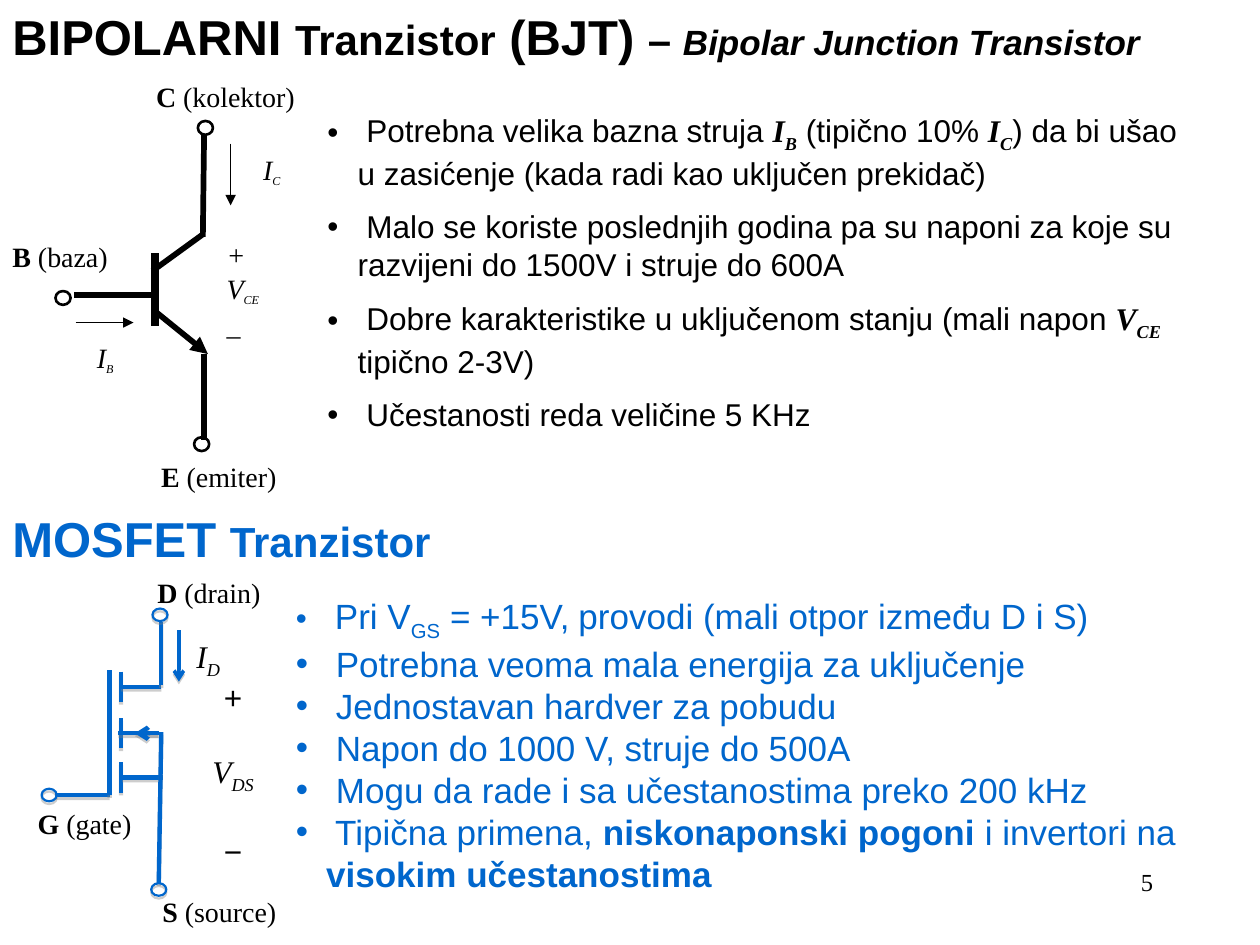
from dataclasses import dataclass
from typing import Optional

from lxml.etree import SubElement
from pptx import Presentation
from pptx.dml.color import RGBColor
from pptx.enum.shapes import MSO_CONNECTOR as Connector, MSO_SHAPE as Shape
from pptx.enum.text import MSO_AUTO_SIZE as AutoSize, PP_ALIGN as Align
from pptx.oxml.ns import qn
from pptx.util import Inches, Pt

COLORS = {"black": "000000", "blue": "0066CC", "shadow": "808080"}
SANS, SERIF = "Arial", "Times New Roman"


@dataclass(frozen=True)
class Span:
    text: str
    size: float = 18
    font: str = SANS
    color: str = "black"
    bold: bool = False
    italic: bool = False
    sub: bool = False


@dataclass(frozen=True)
class Label:
    left: float
    top: float
    width: float
    height: float
    paras: list
    wrap: bool = True
    align: Align = Align.LEFT
    gap: float = 0
    bullet: bool = False


@dataclass(frozen=True)
class Wire:
    x1: float
    y1: float
    x2: float
    y2: float
    width: float
    head: Optional[str] = None


def rgb(name: str) -> RGBColor:
    return RGBColor.from_string(COLORS[name])


def set_effects(shape, shadow: bool) -> None:
    effects = SubElement(shape._element.spPr, qn("a:effectLst"))
    if shadow:
        outer = SubElement(effects, qn("a:outerShdw"), blurRad="0", dist=str(Pt(1.6)),
                           dir="5400000", rotWithShape="0")
        tint = SubElement(outer, qn("a:srgbClr"), val=COLORS["shadow"])
        SubElement(tint, qn("a:alpha"), val="38000")


def draw_wire(shapes, wire: Wire, color: str, shadow: bool) -> None:
    ends = [Inches(v) for v in (wire.x1, wire.y1, wire.x2, wire.y2)]
    line = shapes.add_connector(Connector.STRAIGHT, *ends)
    line.line.color.rgb = rgb(color)
    line.line.width = Pt(wire.width)
    if wire.head:
        SubElement(line.line._get_or_add_ln(), qn("a:tailEnd"), type=wire.head)
    set_effects(line, shadow)


def draw_terminal(shapes, left: float, top: float, height: float,
                  color: str, width: float, shadow: bool) -> None:
    ring = shapes.add_shape(Shape.OVAL, Inches(left), Inches(top), Inches(0.12), Inches(height))
    ring.fill.background()
    ring.line.color.rgb = rgb(color)
    ring.line.width = Pt(width)
    set_effects(ring, shadow)


def draw_label(shapes, label: Label) -> None:
    box = shapes.add_textbox(Inches(label.left), Inches(label.top),
                             Inches(label.width), Inches(label.height))
    frame = box.text_frame
    frame.word_wrap = label.wrap
    frame.auto_size = AutoSize.SHAPE_TO_FIT_TEXT
    for index, spans in enumerate(label.paras):
        para = frame.paragraphs[0] if index == 0 else frame.add_paragraph()
        para.alignment = label.align
        if index and label.gap:
            para.space_before = Pt(label.gap)
        if label.bullet:
            props = para._p.get_or_add_pPr()
            props.set("marL", str(Inches(0.24)))
            props.set("indent", str(-Inches(0.24)))
            SubElement(props, qn("a:buFont"), typeface=SANS)
            SubElement(props, qn("a:buChar"), char="•")
        for span in spans:
            run = para.add_run()
            run.text = span.text
            font = run.font
            font.name, font.size = span.font, Pt(span.size)
            font.bold, font.italic = span.bold, span.italic
            font.color.rgb = rgb(span.color)
            if span.sub:
                run._r.get_or_add_rPr().set("baseline", "-25000")


def symbol(name: str, sub: str, size: float = 18, sub_size: float = 18,
           bold: bool = False) -> list[Span]:
    return [Span(name, size, SERIF, bold=bold, italic=True),
            Span(sub, sub_size, SERIF, bold=bold, italic=True, sub=True)]


def pin(letter: str, name: str) -> list:
    return [[Span(letter + " ", 16, SERIF, bold=True), Span(f"({name})", 16, SERIF)]]


def blue(text: str, size: float = 20, **style) -> Span:
    return Span(text, size, color="blue", **style)


MOSFET_WIRES = [
    Wire(0.44, 6.31, 0.87, 6.31, 2.5),
    Wire(0.87, 6.31, 0.87, 5.32, 2.5),
    *[Wire(0.96, top, 0.96, top + 0.24, 2.5) for top in (5.33, 5.7, 6.05)],
    Wire(0.96, 5.45, 1.28, 5.45, 2.5),
    Wire(1.28, 5.44, 1.28, 4.94, 2.5),
    Wire(0.94, 5.82, 1.26, 5.82, 2.5),
    Wire(0.97, 6.17, 1.29, 6.17, 2.5),
    Wire(1.26, 7.01, 1.28, 5.81, 2.5),
    Wire(1.26, 5.82, 1.07, 5.82, 2.5, "arrow"),
]
MOSFET_TERMINALS = [(1.21, 4.83), (1.2, 7.01), (0.33, 6.26)]
MOSFET_PINS = [
    Label(1.15, 4.52, 1.1, 0.37, pin("D", "drain")),
    Label(1.19, 7.05, 1.45, 0.37, pin("S", "source")),
    Label(0.2, 6.35, 1.02, 0.37, pin("G", "gate")),
    Label(1.57, 5.33, 0.56, 1.62, [[Span("+")], symbol("V", "DS"), [Span("−")]],
          wrap=False, align=Align.CENTER, gap=21),
]
BJT_WIRES = [
    Wire(1.23, 2.01, 1.23, 2.59, 5),
    Wire(1.23, 2.47, 1.65, 2.81, 3.25, "triangle"),
    Wire(1.21, 2.15, 1.61, 1.86, 3.25),
    Wire(0.59, 2.34, 1.24, 2.34, 3.25),
    Wire(1.61, 1.88, 1.62, 1.07, 3.25),
    Wire(1.62, 2.81, 1.62, 3.49, 3.25),
    Wire(1.83, 1.14, 1.83, 1.63, 0.75, "triangle"),
    Wire(0.6, 2.56, 1.06, 2.56, 0.75, "triangle"),
]
BJT_TERMINALS = [(1.57, 0.96), (1.54, 3.47), (0.44, 2.31)]
BJT_LABELS = [
    Label(1.7, 1.84, 0.48, 0.9, [[Span("+", 16, SERIF, italic=True)], symbol("V", "CE", 16, 12),
                                 [Span("_", 16, SERIF, italic=True)]], wrap=False),
    Label(1.99, 1.16, 0.35, 0.37, [symbol("I", "C", 16, 12)], wrap=False),
    Label(0.67, 2.65, 0.34, 0.37, [symbol("I", "B", 16, 12)], wrap=False),
    Label(1.14, 0.58, 1.32, 0.37, pin("C", "kolektor"), wrap=False),
    Label(0, 1.85, 1.09, 0.37, pin("B", "baza")),
    Label(1.18, 3.6, 1.13, 0.37, pin("E", "emiter"), wrap=False),
]
BJT_POINTS = [
    [Span(" Potrebna velika bazna struja "), *symbol("I", "B", bold=True),
     Span(" (tipično 10% "), *symbol("I", "C", bold=True),
     Span(") da bi ušao u zasićenje (kada radi kao uključen prekidač)")],
    [Span(" Malo se koriste poslednjih godina pa su naponi za koje su "
          "razvijeni do 1500V i struje do 600A")],
    [Span(" Dobre karakteristike u uključenom stanju (mali napon "),
     *symbol("V", "CE", bold=True), Span(" tipično 2-3V)")],
    [Span(" Učestanosti reda veličine 5 KHz")],
]
MOSFET_POINTS = [
    [blue(" ", 18), blue("Pri V"), blue("GS", sub=True), blue(" = +15V,"), blue(" ", 18),
     blue("provodi (mali otpor između D i S)")],
    [blue(" Potrebna veoma mala energija za uključenje")],
    [blue(" Jednostavan hardver za pobudu")],
    [blue(" Napon do 1000 V, struje do 500A")],
    [blue(" Mogu da rade i sa učestanostima preko 200 kHz")],
    [blue(" Tipična primena, "), blue("niskonaponski pogoni", bold=True),
     blue(" i invertori na "), blue("visokim učestanostima", bold=True)],
]
BJT_TITLE = [Span("BIPOLARNI ", 28, bold=True), Span("Tranzistor", 24, bold=True),
             Span(" (BJT) ", 28, bold=True), Span("– ", 24, bold=True),
             Span("Bipolar Junction Transistor", 20, bold=True, italic=True)]
MOSFET_TITLE = [blue("MOSFET ", 28, bold=True), blue("Tranzistor", 24, bold=True)]
PAGE_LABELS = [
    Label(7.17, 6.83, 2.08, 0.5, [[Span("5", 14, SERIF)]], align=Align.RIGHT),
    Label(1.46, 5.01, 0.51, 0.4, [symbol("I", "D")]),
    Label(0, 3.99, 9.83, 0.57, [MOSFET_TITLE]),
    Label(0, 0, 10, 0.57, [BJT_TITLE]),
    Label(2.5, 0.83, 7, 3.11, BJT_POINTS, gap=9, bullet=True),
    Label(2.25, 4.67, 7.25, 2.77, MOSFET_POINTS, bullet=True),
]


def draw_circuit(page, wires: list[Wire], terminals: list, labels: list[Label], color: str,
                 ring_height: float, ring_width: float, shadow: bool) -> None:
    shapes = page.shapes.add_group_shape().shapes
    for wire in wires:
        draw_wire(shapes, wire, color, shadow)
    for left, top in terminals:
        draw_terminal(shapes, left, top, ring_height, color, ring_width, shadow)
    for label in labels:
        draw_label(shapes, label)


def main() -> None:
    deck = Presentation()
    deck.slide_width, deck.slide_height = Inches(10), Inches(7.5)
    page = deck.slides.add_slide(deck.slide_layouts[6])
    draw_circuit(page, MOSFET_WIRES, MOSFET_TERMINALS, MOSFET_PINS, "blue", 0.1, 1.25, True)
    draw_wire(page.shapes, Wire(1.42, 5, 1.42, 5.41, 2, "arrow"), "blue", True)
    draw_circuit(page, BJT_WIRES, BJT_TERMINALS, BJT_LABELS, "black", 0.11, 1.5, False)
    for label in PAGE_LABELS:
        draw_label(page.shapes, label)
    deck.save("out.pptx")


if __name__ == "__main__":
    main()
